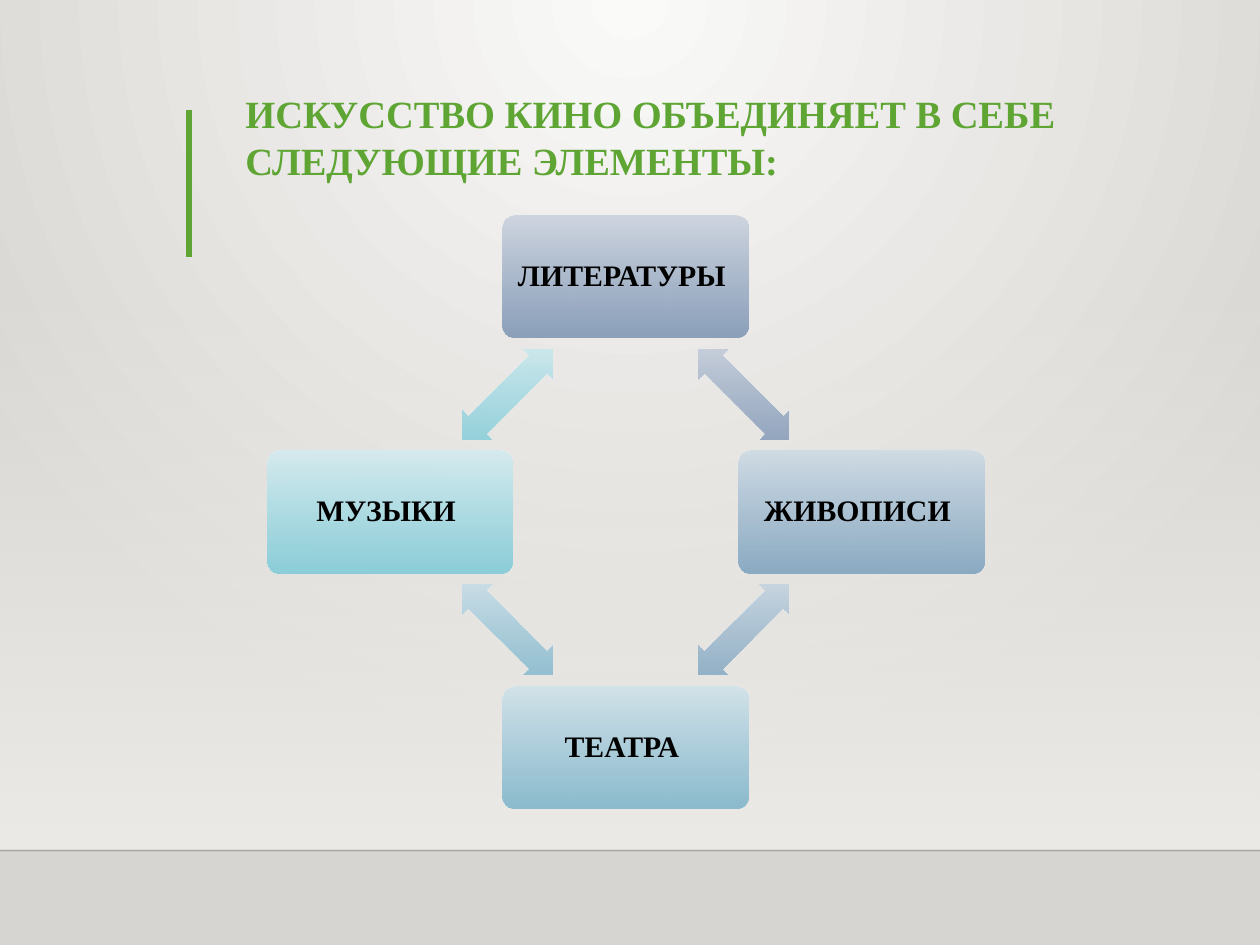
"""Build a slide with a cycle of the four arts that cinema unites."""
import math
from dataclasses import dataclass

import pptx
import pptx.dml.color
import pptx.enum.shapes
import pptx.enum.text
import pptx.oxml.ns
import pptx.util
from lxml import etree

Inches = pptx.util.Inches
Pt = pptx.util.Pt
qn = pptx.oxml.ns.qn
SHAPE = pptx.enum.shapes.MSO_SHAPE
ANCHOR = pptx.enum.text.MSO_ANCHOR
ALIGN = pptx.enum.text.PP_ALIGN

CENTER_X, CENTER_Y, RADIUS = 4.965, 4.065, 1.87
BOX_W, BOX_H = 1.95, 0.97
ARROW_W, ARROW_H = 1.01, 0.34
GREEN = "5FA534"


@dataclass
class Art:
    """One box of the cycle and the colours it shares with its arrow."""
    name: str
    top: str
    bottom: str


ARTS = [
    Art("ЛИТЕРАТУРЫ ", "CED5DF", "849AB7"),
    Art("ЖИВОПИСИ ", "D0DBE4", "84A7C1"),
    Art("ТЕАТРА ", "D2E2EA", "84B8CC"),
    Art("МУЗЫКИ ", "D5EBEF", "85CCD8"),
]


def color(value: str) -> pptx.dml.color.RGBColor:
    """Turn a hex string into a colour."""
    return pptx.dml.color.RGBColor.from_string(value)


def set_format(target, values: dict) -> None:
    """Set every attribute named in the dict."""
    for name, value in values.items():
        setattr(target, name, value)


def set_alpha(clr, percent: float) -> None:
    """Make a colour element partly transparent."""
    etree.SubElement(clr, qn("a:alpha")).set("val", str(int(percent * 1000)))


def set_gradient(fill, element, colors: tuple, alphas=(100, 100)):
    """Fill from top to bottom and return the gradient element."""
    fill.gradient()
    fill.gradient_angle = 270
    grad = element.xpath(".//a:gradFill")[0]
    grad.set("rotWithShape", "0")
    for stop, value, position in zip(fill.gradient_stops, colors, (0, 1)):
        stop.color.rgb = color(value)
        stop.position = position
    for clr, alpha in zip(grad.iter(qn("a:srgbClr")), alphas):
        if alpha < 100:
            set_alpha(clr, alpha)
    return grad


def add_background(s) -> None:
    """Lay a radial gradient from the top centre over the slide."""
    grad = set_gradient(s.background.fill, s.element, ("FAFAF9", "D7D5D2"))
    grad.remove(grad.find(qn("a:lin")))
    radial = etree.SubElement(grad, qn("a:path"))
    radial.set("path", "circle")
    rect = etree.SubElement(radial, qn("a:fillToRect"))
    for side, value in {"l": 43000, "t": 0, "r": 43000, "b": 100000}.items():
        rect.set(side, str(value))


def add_shape(s, kind, x: float, y: float, w: float, h: float,
              colors: tuple, alphas: tuple):
    """Add an outline-free shape with a vertical gradient."""
    sp = s.shapes.add_shape(kind, Inches(x), Inches(y), Inches(w), Inches(h))
    sp.shadow.inherit = False
    sp.line.fill.background()
    set_gradient(sp.fill, sp.element, colors, alphas)
    return sp


def add_line(s, x1: float, y1: float, x2: float, y2: float,
             value: str, width: float):
    """Add a straight line without a shadow."""
    line = s.shapes.add_connector(pptx.enum.shapes.MSO_CONNECTOR.STRAIGHT,
                                  Inches(x1), Inches(y1), Inches(x2), Inches(y2))
    line.line.color.rgb = color(value)
    line.line.width = Pt(width)
    etree.SubElement(line.element.spPr, qn("a:effectLst"))
    return line


def write(sp, text: str, size: float, value: str, frame: dict, para: dict) -> None:
    """Write one bold paragraph into a shape."""
    tf = sp.text_frame
    set_format(tf, {"word_wrap": True, **frame})
    p = tf.paragraphs[0]
    set_format(p, para)
    r = p.add_run()
    r.text = text
    set_format(r.font, {"name": "Times New Roman", "size": Pt(size), "bold": True})
    r.font.color.rgb = color(value)


def add_art(s, art: Art, index: int) -> None:
    """Add a box of the cycle and the arrow that follows it clockwise."""
    def corner(angle: float, radius: float, w: float, h: float) -> tuple:
        """Give the left top corner of a shape centred on the circle."""
        a = math.radians(angle)
        return (CENTER_X + radius * math.cos(a) - w / 2,
                CENTER_Y + radius * math.sin(a) - h / 2, w, h)

    angle = 90 * index - 90
    colors, alphas = (art.top, art.bottom), (100, 92)
    box = add_shape(s, SHAPE.ROUNDED_RECTANGLE,
                    *corner(angle, RADIUS, BOX_W, BOX_H), colors, alphas)
    box.adjustments[0] = 0.1
    margins = {f"margin_{side}": Inches(0.07)
               for side in ("left", "top", "right", "bottom")}
    write(box, art.name, 17, "000000",
          {"vertical_anchor": ANCHOR.MIDDLE, **margins},
          {"alignment": ALIGN.CENTER, "line_spacing": 0.9})
    arrow = add_shape(s, SHAPE.LEFT_RIGHT_ARROW,
                      *corner(angle + 45, RADIUS / math.sqrt(2), ARROW_W, ARROW_H),
                      colors, alphas)
    arrow.adjustments[0] = 0.6
    arrow.adjustments[1] = 0.5
    arrow.rotation = angle + 135


def main() -> None:
    """Build and save the slide."""
    prs = pptx.Presentation()
    prs.slide_width, prs.slide_height = Inches(10), Inches(7.5)
    s = prs.slides.add_slide(prs.slide_layouts[6])
    add_background(s)
    add_shape(s, SHAPE.RECTANGLE, 0, 2.2, 10, 4.54, ("EDEBE7", "EDEBE7"), (0, 100))
    floor = add_line(s, 0, 6.75, 10, 6.75, "000001", 1)
    set_alpha(floor.element.xpath(".//a:srgbClr")[0], 20)
    add_line(s, 1.5, 0.87, 1.5, 2.04, GREEN, 3)
    for index, art in enumerate(ARTS):
        add_art(s, art, index)
    title = s.shapes.add_textbox(Inches(1.85), Inches(0.63), Inches(7.24), Inches(0.87))
    write(title, "ИСКУССТВО КИНО ОБЪЕДИНЯЕТ В СЕБЕ СЛЕДУЮЩИЕ ЭЛЕМЕНТЫ:", 22, GREEN,
          {"vertical_anchor": ANCHOR.BOTTOM}, {"alignment": ALIGN.LEFT})
    prs.save("out.pptx")


if __name__ == "__main__":
    main()
